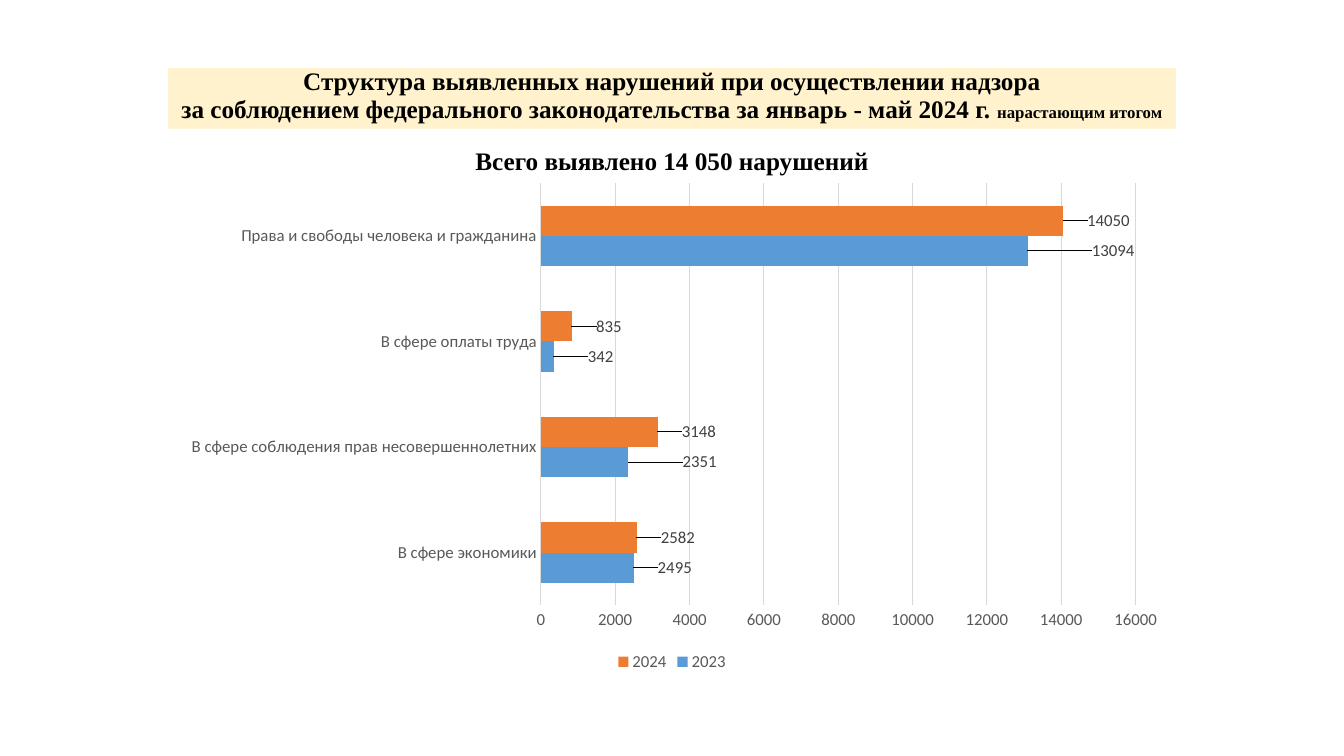
from lxml import etree
from pptx import Presentation
from pptx.chart.data import CategoryChartData as Data
from pptx.dml.color import RGBColor as Rgb
from pptx.enum.chart import XL_CHART_TYPE as Kind
from pptx.enum.chart import XL_LABEL_POSITION as Spot
from pptx.enum.chart import XL_LEGEND_POSITION as Side
from pptx.enum.chart import XL_TICK_MARK as Tick
from pptx.enum.text import MSO_ANCHOR as Anchor
from pptx.enum.text import PP_ALIGN as Align
from pptx.oxml.ns import qn
from pptx.util import Inches, Pt

WIDE, HIGH = Inches(13.33), Inches(7.5)
LEFT, SPAN = 0.125, 0.75
SERIF, SANS = "Times New Roman", "Calibri"
HUES = {
    "cream": "FFF2CC",
    "black": "000000",
    "text": "595959",
    "label": "404040",
    "grid": "D9D9D9",
    "blue": "5B9BD5",
    "orange": "ED7D31",
}
AREAS = [
    "В сфере экономики",
    "В сфере соблюдения прав несовершеннолетних",
    "В сфере оплаты труда",
    "Права и свободы человека и гражданина",
]
YEARS = [
    ("2023", "blue", [2495, 2351, 342, 13094], [0.02, 0.05, 0.03, 0.06]),
    ("2024", "orange", [2582, 3148, 835, 14050], [0.02, 0.02, 0.02, 0.02]),
]


def hue(name):
    return Rgb.from_string(HUES[name])


def style(font, size, color, face, bold=False):
    font.size, font.name, font.bold = Pt(size), face, bold
    font.color.rgb = hue(color)


def band(top, tall):
    return int(WIDE * LEFT), int(HIGH * top), int(WIDE * SPAN), int(HIGH * tall)


def write(para, text, size):
    run = para.add_run()
    run.text = text
    style(run.font, size, "black", SERIF, True)


def center(frame, spacing):
    frame.word_wrap = True
    para = frame.paragraphs[0]
    para.alignment = Align.CENTER
    para.line_spacing = spacing
    return para


def add_title(slide):
    title = slide.shapes.title
    title.left, title.top, title.width, title.height = band(0.09, 0.08)
    title.fill.solid()
    title.fill.fore_color.rgb = hue("cream")
    title.text_frame.vertical_anchor = Anchor.BOTTOM
    para = center(title.text_frame, 0.9)
    write(para, "Структура выявленных нарушений при осуществлении надзора", 18)
    para.add_line_break()
    write(para, "за соблюдением федерального законодательства за январь - май 2024 г. ", 18)
    write(para, "нарастающим итогом", 12)


def add_total(slide):
    box = slide.shapes.add_textbox(*band(0.193, 0.048))
    write(center(box.text_frame, 0.8), "Всего выявлено 14 050 нарушений", 18)


def set_place(layout, **parts):
    for old in list(layout):
        layout.remove(old)
    manual = etree.SubElement(layout, qn("c:manualLayout"))
    for tag, value in parts.items():
        etree.SubElement(manual, qn(f"c:{tag}")).set("val", str(value))


def set_plot(chart):
    area = chart.plots[0]._element.getparent()
    layout = area.find(qn("c:layout"))
    if layout is None:
        layout = etree.Element(qn("c:layout"))
        area.insert(0, layout)
    set_place(layout, layoutTarget="inner", xMode="edge", yMode="edge",
              x=0.37, y=0.02, w=0.59, h=0.84)


def set_label(point, shift):
    label = point.data_label
    style(label.font, 12, "label", SANS)
    label.position = Spot.OUTSIDE_END
    layout = etree.Element(qn("c:layout"))
    label.font._element.getparent()
    set_place(layout, x=shift, y=0)
    return layout


def set_series(series, color, shifts):
    series.format.fill.solid()
    series.format.fill.fore_color.rgb = hue(color)
    layouts = [set_label(series.points[i], s) for i, s in enumerate(shifts)]
    marks = series.data_labels
    marks.show_value = True
    marks.position = Spot.OUTSIDE_END
    style(marks.font, 12, "label", SANS)
    for mark, layout in zip(series._element.iter(qn("c:dLbl")), layouts):
        mark.insert(1, layout)


def set_axis(axis):
    axis.major_tick_mark = axis.minor_tick_mark = Tick.NONE
    axis.format.line.fill.background()
    style(axis.tick_labels.font, 12, "text", SANS)


def add_bars(slide):
    data = Data()
    data.categories = AREAS
    for year, _, values, _ in YEARS:
        data.add_series(year, values)
    chart = slide.shapes.add_chart(Kind.BAR_CLUSTERED, *band(0.229, 0.665), data).chart
    style(chart.font, 10, "black", SANS)
    chart.has_title = False
    set_plot(chart)
    plot = chart.plots[0]
    plot.gap_width, plot.overlap, plot.vary_by_categories = 150, 0, False
    for series, (_, color, _, shifts) in zip(plot.series, YEARS):
        set_series(series, color, shifts)
    set_axis(chart.category_axis)
    chart.category_axis.has_major_gridlines = False
    scale = chart.value_axis
    set_axis(scale)
    scale.minimum_scale, scale.maximum_scale, scale.major_unit = 0, 16000, 2000
    scale.has_major_gridlines = True
    grid = scale.major_gridlines.format.line
    grid.width = Pt(0.75)
    grid.color.rgb = hue("grid")
    chart.has_legend = True
    chart.legend.position = Side.BOTTOM
    chart.legend.include_in_layout = False
    style(chart.legend.font, 12, "text", SANS)


def main():
    deck = Presentation()
    deck.slide_width, deck.slide_height = WIDE, HIGH
    slide = deck.slides.add_slide(deck.slide_layouts[5])
    add_title(slide)
    add_total(slide)
    add_bars(slide)
    deck.save("out.pptx")


if __name__ == "__main__":
    main()
